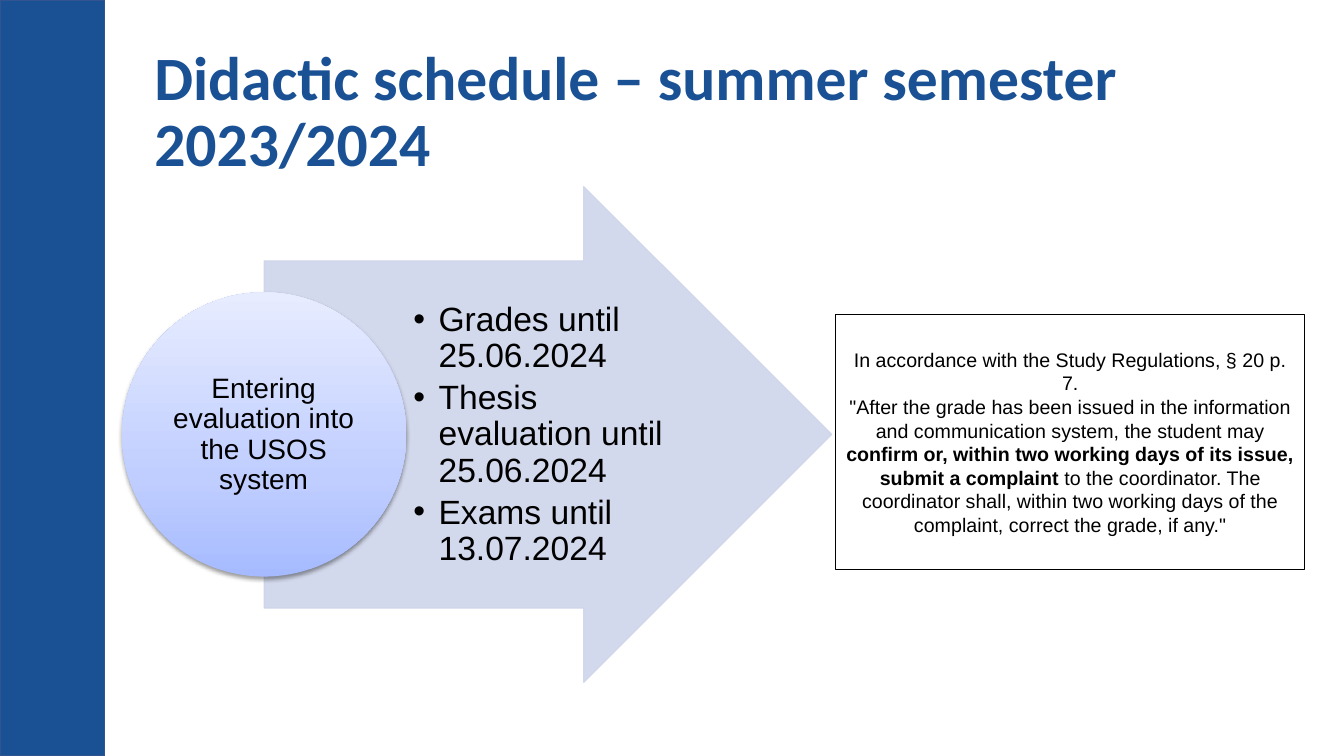
"""Build a slide with the grading deadlines of the summer semester."""
from dataclasses import dataclass

from lxml import etree
from pptx import Presentation
from pptx.dml.color import RGBColor
from pptx.enum.shapes import MSO_SHAPE
from pptx.enum.text import MSO_ANCHOR, MSO_AUTO_SIZE, PP_ALIGN
from pptx.oxml import parse_xml
from pptx.oxml.ns import nsdecls, qn
from pptx.util import Inches, Pt

RECTANGLE, ARROW, OVAL = MSO_SHAPE.RECTANGLE, MSO_SHAPE.RIGHT_ARROW, MSO_SHAPE.OVAL
MIDDLE, NO_AUTOFIT = MSO_ANCHOR.MIDDLE, MSO_AUTO_SIZE.NONE
LEFT, CENTER = PP_ALIGN.LEFT, PP_ALIGN.CENTER


@dataclass(frozen=True)
class Theme:
    """Colours, fonts and type sizes of the slide."""
    brand: str = "1A5194"
    brand_line: str = "31538F"
    arrow: str = "CFD5EA"
    text: str = "000000"
    circle_stops: tuple = ((0, "A6BBFF"), (35, "C0CEFF"), (100, "E7ECFF"))
    title_font: str = "Calibri"
    body_font: str = "Arial"
    title_size: int = 44
    list_size: int = 24
    label_size: int = 20
    note_size: int = 14


class SlideBuilder:
    """Draws styled elements on the current slide."""

    def __init__(self, slide, theme):
        self.slide, self.theme = slide, theme

    def place(self, shape, box):
        shape.left, shape.top, shape.width, shape.height = map(Inches, box)

    def prepare_frame(self, frame, insets):
        frame.word_wrap = True
        frame.auto_size = NO_AUTOFIT
        frame.vertical_anchor = MIDDLE
        (frame.margin_left, frame.margin_top,
         frame.margin_right, frame.margin_bottom) = map(Inches, insets)

    def style(self, paragraph, size, align=CENTER, spacing=0.9, after=0):
        paragraph.alignment = align
        paragraph.line_spacing = spacing
        paragraph.space_before = Pt(0)
        paragraph.space_after = Pt(after)
        paragraph.font.name = self.theme.body_font
        paragraph.font.size = Pt(size)
        paragraph.font.color.rgb = RGBColor.from_string(self.theme.text)

    def shape(self, kind, box, fill=None, line=None, line_width=0.75):
        shape = self.slide.shapes.add_shape(kind, *map(Inches, box))
        shape.shadow.inherit = False
        if fill:
            shape.fill.solid()
            shape.fill.fore_color.rgb = RGBColor.from_string(fill)
        else:
            shape.fill.background()
        if line:
            shape.line.color.rgb = RGBColor.from_string(line)
            shape.line.width = Pt(line_width)
        else:
            shape.line.fill.background()
        return shape

    def title(self, text, box):
        title = self.slide.shapes.title
        self.place(title, box)
        self.prepare_frame(title.text_frame, (0.1, 0.05, 0.1, 0.05))
        title.text_frame.text = text
        paragraph = title.text_frame.paragraphs[0]
        self.style(paragraph, self.theme.title_size, LEFT)
        paragraph.font.name = self.theme.title_font
        paragraph.font.bold = True
        paragraph.font.color.rgb = RGBColor.from_string(self.theme.brand)

    def arrow(self, box):
        arrow = self.shape(ARROW, box, self.theme.arrow, self.theme.arrow)
        arrow.adjustments[0], arrow.adjustments[1] = 0.7, 0.5
        for color in arrow._element.spPr.iter(qn("a:srgbClr")):
            etree.SubElement(color, qn("a:alpha"), val="90000")

    def bullets(self, items, box):
        body = self.slide.placeholders[1]
        self.place(body, box)
        self.slide.shapes._spTree.append(body._element)
        frame = body.text_frame
        self.prepare_frame(frame, (0.07, 0.02, 0.03, 0.02))
        frame.text = "\n".join(items)
        for paragraph in frame.paragraphs:
            properties = paragraph._p.get_or_add_pPr()
            properties.set("marL", str(Inches(0.25)))
            properties.set("indent", str(Inches(-0.25)))
            etree.SubElement(properties, qn("a:buFont"), typeface=self.theme.body_font)
            etree.SubElement(properties, qn("a:buChar"), char="•")
            self.style(paragraph, self.theme.list_size, LEFT, after=4)

    def circle(self, box):
        circle = self.shape(OVAL, box)
        properties = circle._element.spPr
        stops = "".join(
            f'<a:gs pos="{position * 1000}"><a:srgbClr val="{color}"/></a:gs>'
            for position, color in self.theme.circle_stops)
        gradient = parse_xml(
            f'<a:gradFill {nsdecls("a")} rotWithShape="1"><a:gsLst>{stops}</a:gsLst>'
            '<a:lin ang="16200000" scaled="0"/></a:gradFill>')
        properties.replace(properties.find(qn("a:noFill")), gradient)
        shadow = etree.SubElement(
            properties.find(qn("a:effectLst")), qn("a:outerShdw"),
            blurRad=str(Pt(3.1)), dist=str(Pt(1.6)), dir="5400000", rotWithShape="0")
        color = etree.SubElement(shadow, qn("a:srgbClr"), val=self.theme.text)
        etree.SubElement(color, qn("a:alpha"), val="38000")

    def label(self, text, box):
        label = self.slide.shapes.add_textbox(*map(Inches, box))
        self.prepare_frame(label.text_frame, (0.01,) * 4)
        label.text_frame.text = text
        self.style(label.text_frame.paragraphs[0], self.theme.label_size)

    def note(self, paragraphs, box):
        frame = self.shape(RECTANGLE, box, line=self.theme.text).text_frame
        self.prepare_frame(frame, (0.1, 0.05, 0.1, 0.05))
        for index, runs in enumerate(paragraphs):
            paragraph = frame.add_paragraph() if index else frame.paragraphs[0]
            self.style(paragraph, self.theme.note_size, spacing=1.0)
            for text, bold in runs:
                run = paragraph.add_run()
                run.text = text
                run.font.bold = bold


def main():
    presentation = Presentation()
    presentation.slide_width, presentation.slide_height = Inches(13.33), Inches(7.5)
    slide = presentation.slides.add_slide(presentation.slide_layouts[1])
    theme = Theme()
    builder = SlideBuilder(slide, theme)

    builder.shape(RECTANGLE, (0, 0, 1.04, 7.5), theme.brand, theme.brand_line, 1)
    builder.title("Didactic schedule – summer semester 2023/2024", (1.43, 0.4, 11.5, 1.45))
    builder.arrow((2.62, 1.85, 5.63, 4.92))
    builder.bullets(
        ["Grades until 25.06.2024", "Thesis evaluation until 25.06.2024",
         "Exams until 13.07.2024"],
        (4.03, 2.59, 2.75, 3.45))
    builder.circle((1.21, 2.9, 2.82, 2.82))
    builder.label("Entering evaluation into the USOS system", (1.62, 3.32, 1.99, 1.99))
    builder.note(
        [[("In accordance with the Study Regulations, § 20 p. 7.", False)],
         [('"After the grade has been issued in the information and communication '
           "system, the student may ", False),
          ("confirm or, within two working days of its issue, submit a complaint ", True),
          ("to the coordinator. The coordinator shall, within two working days of the "
           'complaint, correct the grade, if any."', False)]],
        (8.29, 3.12, 4.65, 2.53))
    presentation.save("out.pptx")


if __name__ == "__main__":
    main()
